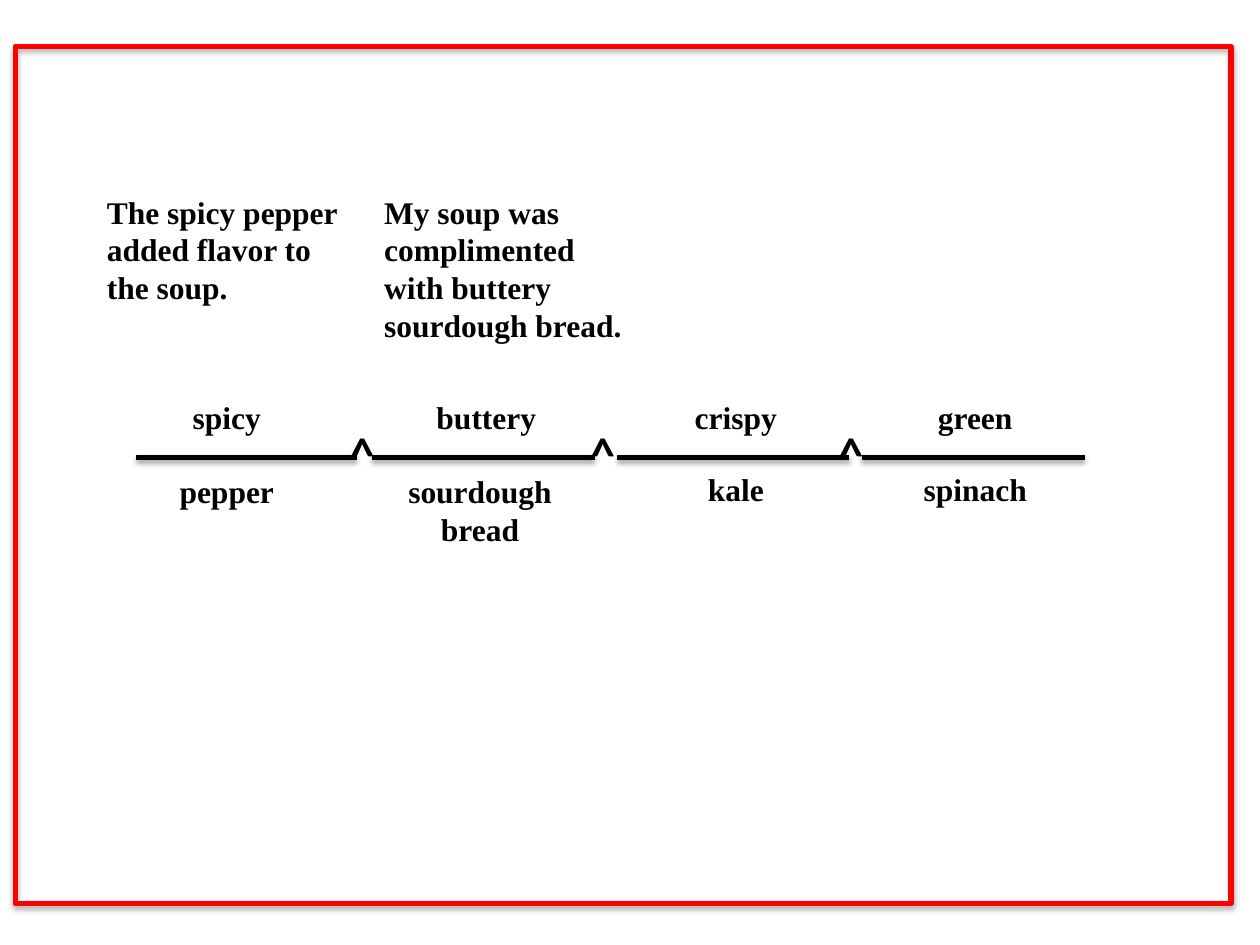
from lxml import etree
from pptx import Presentation
from pptx.dml.color import RGBColor
from pptx.enum.shapes import MSO_CONNECTOR, MSO_SHAPE
from pptx.enum.text import MSO_AUTO_SIZE, PP_ALIGN
from pptx.oxml.ns import qn
from pptx.util import Inches, Pt

RECTANGLE = MSO_SHAPE.RECTANGLE
STRAIGHT = MSO_CONNECTOR.STRAIGHT
FIT_SHAPE = MSO_AUTO_SIZE.SHAPE_TO_FIT_TEXT
LEFT, CENTER = PP_ALIGN.LEFT, PP_ALIGN.CENTER

BLACK = RGBColor(0x00, 0x00, 0x00)
RED = RGBColor(0xFF, 0x00, 0x00)
SERIF, SANS = "Times New Roman", "Calibri"

# Content: (adjective, its left, noun, its left, noun top, rule start, rule end)
PAIRS = [
    ("spicy", 1.08, "pepper", 1.08, 3.70, 1.08, 2.83),
    ("buttery", 3.14, "sourdough\nbread", 3.09, 3.70, 2.95, 4.72),
    ("crispy", 5.12, "kale", 5.12, 3.68, 4.90, 6.74),
    ("green", 7.02, "spinach", 7.02, 3.68, 6.84, 8.61),
]
CARET_LEFTS = [2.68, 4.59, 6.56]
SENTENCES = [
    ("The spicy pepper\nadded flavor to\nthe soup.", 0.75, 2.07, 1.01),
    ("My soup was\ncomplimented\nwith buttery\nsourdough bread.", 2.95, 2.09, 1.31),
]

RULE_Y, CARET_TOP = 3.63, 3.31
ADJECTIVE_TOP, SENTENCE_TOP = 3.11, 1.48
WORD_WIDTH, LINE_HEIGHT, EXTRA_LINE = 1.44, 0.40, 0.31


def add_text(shapes, text, box, align=LEFT, wrap=False, font=SERIF, size=18):
    frame = shapes.add_textbox(*map(Inches, box)).text_frame
    frame.text = text
    frame.word_wrap = wrap
    frame.auto_size = FIT_SHAPE
    for paragraph in frame.paragraphs:
        paragraph.alignment = align
        paragraph.font.name = font
        paragraph.font.size = Pt(size)
        paragraph.font.bold = True
        paragraph.font.color.rgb = BLACK


def add_shadow(properties, distance, opacity):
    """Cast a soft black shadow straight down."""
    for inherited in properties.findall(qn("a:effectLst")):
        properties.remove(inherited)
    effects = etree.SubElement(properties, qn("a:effectLst"))
    shadow = etree.SubElement(
        effects, qn("a:outerShdw"), blurRad=str(Pt(3.1)), dist=str(Pt(distance)),
        dir="5400000", rotWithShape="0")
    color = etree.SubElement(shadow, qn("a:srgbClr"), val=str(BLACK))
    etree.SubElement(color, qn("a:alpha"), val=str(opacity * 1000))


def add_word(shapes, word, left, top):
    height = LINE_HEIGHT + EXTRA_LINE * word.count("\n")
    add_text(shapes, word, (left, top, WORD_WIDTH, height), CENTER, wrap=True)


presentation = Presentation()
presentation.slide_width, presentation.slide_height = Inches(10), Inches(7.5)
slide = presentation.slides.add_slide(presentation.slide_layouts[6])

# Chain of rules joined by carets
chain = slide.shapes.add_group_shape().shapes
for *_, start, end in PAIRS:
    rule = chain.add_connector(
        STRAIGHT, Inches(start), Inches(RULE_Y), Inches(end), Inches(RULE_Y))
    rule.line.color.rgb = BLACK
    rule.line.width = Pt(3)
    add_shadow(rule._element.spPr, 1.6, 38)
for left in CARET_LEFTS:
    add_text(chain, "^", (left, CARET_TOP, 0.46, 0.57), font=SANS, size=28)

# Adjectives above the rules, nouns below
for adjective, adjective_left, noun, noun_left, noun_top, *_ in PAIRS:
    add_word(slide.shapes, adjective, adjective_left, ADJECTIVE_TOP)
    add_word(slide.shapes, noun, noun_left, noun_top)

# Red frame
frame_border = slide.shapes.add_shape(
    RECTANGLE, Inches(0.12), Inches(0.37), Inches(9.65), Inches(6.8))
frame_border.fill.background()
frame_border.line.color.rgb = RED
frame_border.line.width = Pt(3)
add_shadow(frame_border._element.spPr, 1.8, 35)

# Example sentences
for sentence, left, width, height in SENTENCES:
    add_text(slide.shapes, sentence, (left, SENTENCE_TOP, width, height))

presentation.save("out.pptx")
